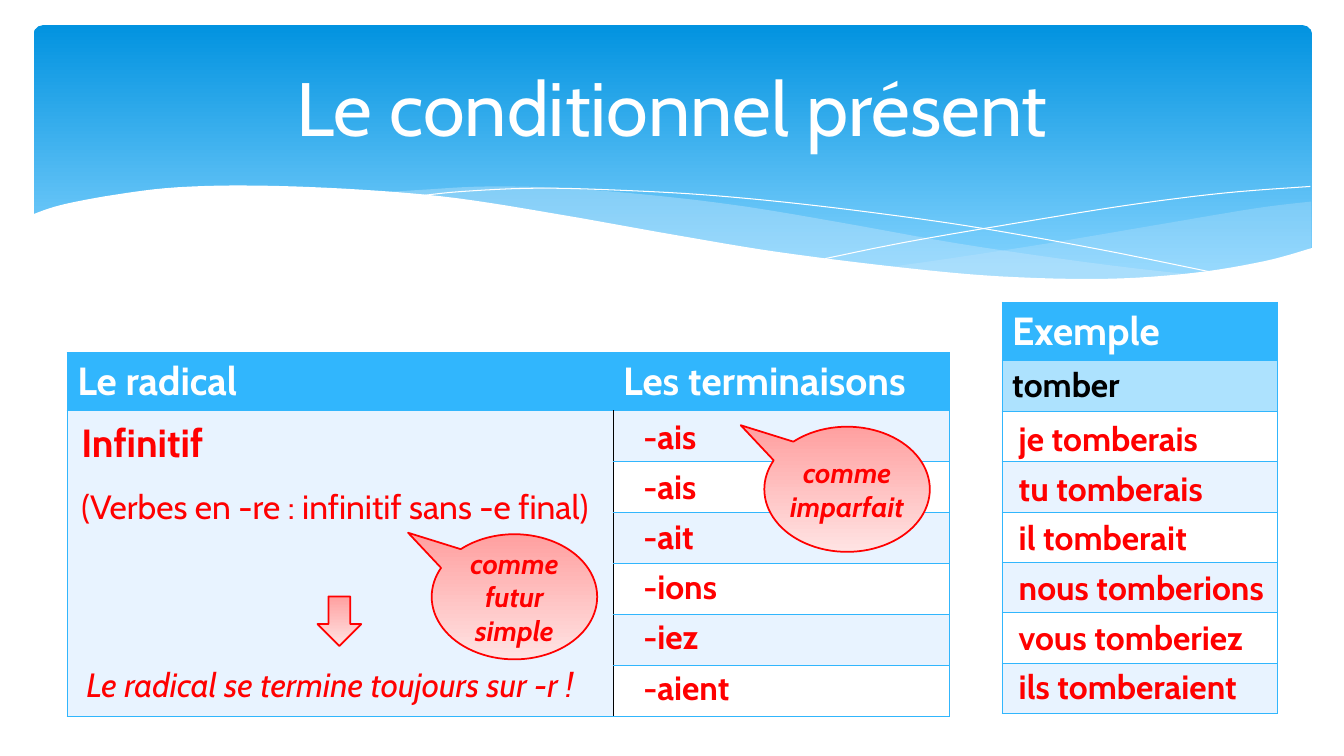
from dataclasses import dataclass

from lxml import etree
from pptx import Presentation
from pptx import util as u
from pptx.dml.color import RGBColor
from pptx.enum import shapes, text
from pptx.oxml.ns import qn

# The slide is a grid of 160 columns by 90 rows; all lengths are in its cells.
COLS, ROWS = 160, 90
CELL = u.Inches(7.5) // ROWS
FONT = "Cabin"
WHITE, BLACK, RED = "FFFFFF", "000000", "FF0000"
BLUE, SKY, PALE, TINT = "31B6FD", "ADE2FE", "E8F3FF", "C6E7FC"

Box = tuple[float, float, float, float]
Knots = list[tuple[float, float]]


@dataclass
class Style:
    size: float
    color: str = RED
    bold: bool = True
    italic: bool = False


@dataclass
class Wave:
    edges: list[Knots]
    fill: str = ""
    alpha: int = 100


@dataclass
class Label:
    box: Box
    lines: list[str]
    styles: list[Style]
    gap: float = 0


@dataclass
class Bubble:
    box: Box
    words: str


HEAD, BODY = Style(28, WHITE), Style(24)
PLAIN, SLANT = Style(24, bold=False), Style(24, bold=False, italic=True)
NOTE = Style(20, italic=True)

WAVES = [
    Wave([[(156.1, 24), (149.5, 24.8), (137.6, 26.8), (124.6, 29), (112.9, 30.8),
           (105.8, 31.8)],
          [(105.8, 31.8), (112.8, 32.5), (121.1, 33.1), (130.2, 33.4), (138.1, 33),
           (146.2, 32), (151.9, 30.8), (156.1, 29.6)]], TINT, 29),
    Wave([[(45.8, 22.9), (50.2, 22.6), (57.8, 22.2), (67.2, 22.4), (78.2, 23.3),
           (88.8, 24.6), (100.7, 26.6), (112.9, 28.8), (124.1, 30.5), (133.9, 31.8),
           (142.8, 32.8)],
          [(142.8, 32.8), (135.7, 33.2), (127.3, 33.4), (117.7, 33), (106.4, 31.9),
           (93.5, 30.2), (78.5, 27.8), (64.7, 25.3), (54.7, 23.9), (45.8, 22.9)]],
         TINT, 40),
    Wave([[(49.4, 23.4), (55, 22.8), (64.2, 22.4), (75, 22.7), (85.2, 23.3),
           (97.3, 24.5), (111.2, 26.3), (121.7, 28), (133, 30.1), (145.2, 32.6)]]),
    Wave([[(98.2, 30.8), (107.5, 28.9), (119.6, 26.8), (133.8, 24.5), (145.6, 23),
           (156, 22.2)]]),
    Wave([[(156.3, 29.5), (150.5, 31.1), (142, 32.5), (131.6, 33.2), (119, 32.9),
           (106.9, 31.8), (92.6, 30), (80.5, 28), (67, 25.6), (54.4, 23.6),
           (43.3, 22.6), (31, 22.1), (21.1, 22.3), (13.6, 23.2), (7.3, 24.4),
           (3.7, 25.6)],
          [(3.7, 39.5), (156.3, 39.5)]], WHITE),
]
ENDS = ["-ais", "-ais", "-ait", "-ions", "-iez", "-aient"]
FORMS = ["je tomberais", "tu tomberais", "il tomberait",
         "nous tomberions", "vous tomberiez", "ils tomberaient"]
LABELS = [
    Label((8.5, 49.2, 63.8, 14.2),
          ["Infinitif", "(Verbes en -re : infinitif sans -e final)"], [HEAD, PLAIN], 14.5),
    Label((9.1, 78.4, 63.8, 6), ["Le radical se termine toujours sur -r !"], [SLANT]),
    *(Label((75.4, 48.9 + 5.97 * i, 20, 6), [end], [BODY]) for i, end in enumerate(ENDS)),
    *(Label((120.1, 49.2 + 5.9 * i, 32.4, 6), [form], [BODY])
      for i, form in enumerate(FORMS)),
]
LABELS[0].styles[0] = Style(28)
BUBBLES = [Bubble((51.4, 63.6, 19.7, 14.9), "comme\nfutur\nsimple"),
           Bubble((91, 50.8, 19.7, 14.9), "comme\nimparfait")]


def rgb(code: str) -> RGBColor:
    return RGBColor.from_string(code)


def emu(*cells: float) -> list[int]:
    return [round(c * CELL) for c in cells]


def style(par, look: Style) -> None:
    for run in par.runs:
        font = run.font
        font.name, font.size = FONT, u.Pt(look.size)
        font.bold, font.italic = look.bold, look.italic
        font.color.rgb = rgb(look.color)


def shade(shape, top: str, low: str, end: float = 1) -> None:
    """Fill from top to bottom with two colours; the second is reached at end."""
    shape.fill.gradient()
    shape.fill.gradient_angle = 270
    for stop, code, pos in zip(shape.fill.gradient_stops, (top, low), (0, end)):
        stop.color.rgb, stop.position = rgb(code), pos


def preset(slide, kind, box: Box):
    shape = slide.shapes.add_shape(kind, *emu(*box))
    shape.shadow.inherit = False
    return shape


def blush(slide, kind, box: Box):
    shape = preset(slide, kind, box)
    shade(shape, "FFA0A0", "FFE3E3")
    shape.line.color.rgb, shape.line.width = rgb(RED), u.Pt(1.25)
    return shape


def curve(knots: Knots, steps: int = 6) -> Knots:
    """Run a Catmull-Rom spline through the knots."""
    pad = [knots[0], *knots, knots[-1]]
    out = [knots[0]]
    for a, b, c, d in zip(pad, pad[1:], pad[2:], pad[3:]):
        for t in (k / steps for k in range(1, steps + 1)):
            out.append(tuple(
                b[i] + t / 2 * (c[i] - a[i] + t * (
                    2 * a[i] - 5 * b[i] + 4 * c[i] - d[i]
                    + t * (3 * b[i] - a[i] - 3 * c[i] + d[i])))
                for i in (0, 1)))
    return out


def draw_wave(slide, wave: Wave) -> None:
    points = [emu(*p) for edge in wave.edges for p in curve(edge)]
    path = slide.shapes.build_freeform(*points[0])
    path.add_line_segments(points[1:], close=bool(wave.fill))
    shape = path.convert_to_shape()
    shape.shadow.inherit = False
    if not wave.fill:
        shape.fill.background()
        shape.line.color.rgb, shape.line.width = rgb(WHITE), u.Pt(0)
        return
    shape.fill.solid()
    shape.fill.fore_color.rgb = rgb(wave.fill)
    shape.line.fill.background()
    if wave.alpha < 100:
        tone = shape.element.spPr.find(qn("a:solidFill"))[0]
        etree.SubElement(tone, qn("a:alpha"), val=str(wave.alpha * 1000))


def draw_label(slide, label: Label) -> None:
    frame = slide.shapes.add_textbox(*emu(*label.box)).text_frame
    frame.word_wrap, frame.margin_right = True, 0
    frame.text = "\n".join(label.lines)
    for par, look in zip(frame.paragraphs, label.styles):
        style(par, look)
    frame.paragraphs[-1].space_before = u.Pt(label.gap)


def draw_bubble(slide, bubble: Bubble) -> None:
    shape = blush(slide, shapes.MSO_SHAPE.OVAL_CALLOUT, bubble.box)
    shape.adjustments[0], shape.adjustments[1] = -0.643, -0.512
    frame = shape.text_frame
    frame.text, frame.word_wrap = bubble.words, False
    frame.vertical_anchor = text.MSO_ANCHOR.MIDDLE
    for par in frame.paragraphs:
        par.alignment = text.PP_ALIGN.CENTER
        style(par, NOTE)


def paint(cell, fill: str, dark: str = "") -> None:
    """Border and fill a cell; dark names the one side (L or R) drawn in black."""
    props = cell._tc.get_or_add_tcPr()
    for side in "LRTB":
        line = etree.SubElement(props, qn("a:ln" + side), w="12700")
        solid = etree.SubElement(line, qn("a:solidFill"))
        etree.SubElement(solid, qn("a:srgbClr"), val=BLACK if side == dark else BLUE)
    cell.fill.solid()
    cell.fill.fore_color.rgb = rgb(fill)


def add_grid(slide, left: float, top: float, cols: list[float], rows: list[float]):
    box = emu(left, top, sum(cols), sum(rows))
    table = slide.shapes.add_table(len(rows), len(cols), *box).table
    table.horz_banding = False
    for col, width in zip(table.columns, emu(*cols)):
        col.width = width
    for row, height in zip(table.rows, emu(*rows)):
        row.height = height
    return table


def write(cell, words: str, look: Style) -> None:
    cell.text = words
    style(cell.text_frame.paragraphs[0], look)


def draw_rules(slide) -> None:
    table = add_grid(slide, 8, 42, [65, 40], [6.9] + [6.07] * 6)
    for col, words in enumerate(["Le radical", "Les terminaisons"]):
        paint(table.cell(0, col), BLUE)
        write(table.cell(0, col), words, HEAD)
    for row in range(1, 7):
        paint(table.cell(row, 0), PALE, "R")
        paint(table.cell(row, 1), PALE if row % 2 else WHITE, "L")
    table.cell(1, 0).merge(table.cell(6, 0))


def draw_sample(slide) -> None:
    table = add_grid(slide, 119.3, 36, [32.8], [6.9] + [6] * 7)
    for row, fill in enumerate([BLUE, SKY] + [WHITE, PALE] * 3):
        paint(table.cell(row, 0), fill)
    write(table.cell(0, 0), "Exemple", HEAD)
    write(table.cell(1, 0), "tomber", Style(24, BLACK))


def draw_title(slide) -> None:
    title = slide.shapes.title
    slide.shapes.element.append(title.element)
    title.left, title.top, title.width, title.height = emu(8, 4.4, 144, 16.4)
    frame = title.text_frame
    frame.text = "Le conditionnel présent"
    frame.vertical_anchor = text.MSO_ANCHOR.MIDDLE
    frame.paragraphs[0].alignment = text.PP_ALIGN.CENTER
    style(frame.paragraphs[0], Style(54, WHITE, bold=False))


def main() -> None:
    deck = Presentation()
    deck.slide_width, deck.slide_height = emu(COLS, ROWS)
    slide = deck.slides.add_slide(deck.slide_layouts[5])
    panel = preset(slide, shapes.MSO_SHAPE.ROUNDED_RECTANGLE, (4, 3, 152.2, 32.4))
    panel.adjustments[0] = 0.034
    shade(panel, "0293E0", "83D3FE", 0.9)
    panel.line.fill.background()
    for wave in WAVES:
        draw_wave(slide, wave)
    draw_title(slide)
    draw_rules(slide)
    draw_sample(slide)
    for label in LABELS:
        draw_label(slide, label)
    blush(slide, shapes.MSO_SHAPE.DOWN_ARROW, (37.8, 71, 5.2, 5.9))
    for bubble in BUBBLES:
        draw_bubble(slide, bubble)
    deck.save("out.pptx")


if __name__ == "__main__":
    main()
